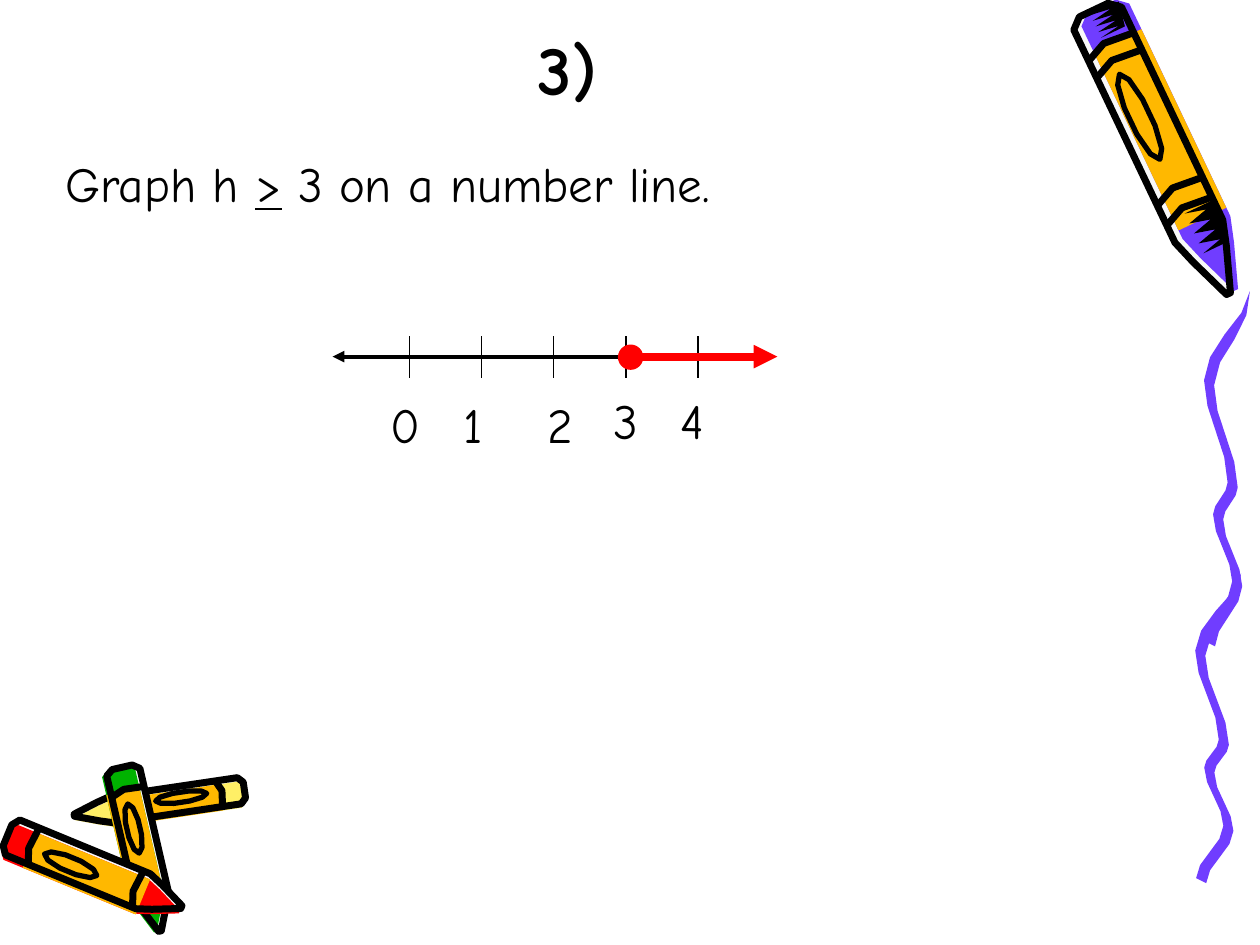
import dataclasses
import math

import lxml.etree
import pptx
import pptx.dml.color
import pptx.enum.shapes
import pptx.enum.text
import pptx.oxml.ns
import pptx.util

Inches = pptx.util.Inches
FONT = "Comic Neue"
BLACK, RED, ORANGE = "000000", "FF0000", "FFB800"
PURPLE, GREEN, YELLOW, PALE = "703DFF", "00B200", "FFEF66", "F8F8F8"

HALF_CRAYON = [(0, 0.3), (0.03, 0.5), (0.78, 0.5), (0.86, 0.35), (1, 0.04)]
CRAYON = HALF_CRAYON + [(along, -across) for along, across in reversed(HALF_CRAYON)]
SQUIGGLE_BENDS = [(0, 1), (0.26, 0.1), (0.55, 0.62), (0.64, 0.3), (0.83, 0.72), (1, 0.12)]


@dataclasses.dataclass
class Crayon:
    """A crayon from tail to tip; shift moves its colour off its ink."""

    tail: tuple
    tip: tuple
    width: float
    wax: str
    shift: float
    bands: tuple = (0.14, 0.74)
    shades: tuple = ()

    def place(self, points, shift=0):
        """Turn fractions of length and width into page inches."""
        run, rise = self.tip[0] - self.tail[0], self.tip[1] - self.tail[1]
        scale = self.width / math.hypot(run, rise)
        return [(self.tail[0] + along * run + (across + shift) * scale * rise,
                 self.tail[1] + along * rise - (across + shift) * scale * run)
                for along, across in points]


CRAYONS = [
    Crayon((8.68, 0.08), (9.75, 2.33), 0.42, PURPLE, 0.16, (0.12, 0.18, 0.63, 0.7),
           ((0.01, 0.09), (0.71, 0.85))),
    Crayon((1.94, 6.27), (0.59, 6.47), 0.21, YELLOW, 0.15),
    Crayon((0.97, 6.09), (1.27, 7.39), 0.27, GREEN, -0.14),
    Crayon((0.06, 6.63), (1.44, 7.2), 0.3, RED, -0.14),
]


def color(value):
    """Turn a hex string into a colour."""
    return pptx.dml.color.RGBColor.from_string(value)


def apply_format(target, values):
    """Set each named attribute on the target."""
    for name, value in values.items():
        setattr(target, name, value)


def paint(shape, fill=None, stroke=None, width=0):
    """Set the fill and line of a shape, each absent unless given."""
    shape.shadow.inherit = False
    for part, value in ((shape.fill, fill), (shape.line.fill, stroke)):
        if value is None:
            part.background()
        else:
            part.solid()
            part.fore_color.rgb = color(value)
    if stroke:
        shape.line.width = pptx.util.Pt(width)


def add_outline(page, points, fill=None, stroke=None, width=4, close=True):
    """Draw an outline through points in inches."""
    corners = [(Inches(across), Inches(down)) for across, down in points]
    builder = page.shapes.build_freeform(*corners[0])
    builder.add_line_segments(corners[1:], close=close)
    paint(builder.convert_to_shape(), fill, stroke, width)


def label_ring(center=0.37, steps=10):
    """Return the oval on a crayon's wrapper as fractions."""
    turns = [2 * math.pi * step / steps for step in range(steps)]
    return [(center + 0.15 * math.cos(turn), -0.08 + 0.2 * math.sin(turn)) for turn in turns]


def jagged_shade(start, end, teeth=4):
    """Return a zigzag shadow along one side of a crayon as fractions."""
    step = (end - start) / (2 * teeth)
    zigzag = [(start + index * step, 0.3 if index % 2 else -0.1) for index in range(2 * teeth + 1)]
    return [(start, 0.5)] + zigzag + [(end, 0.4)]


def add_crayon(page, crayon):
    """Draw paper, wax and wrapper, then the ink on top."""
    first, last = crayon.bands[0], crayon.bands[-1]
    wrapper = [(first, -0.5), (first, 0.5), (last + 0.05, 0.5), (last + 0.05, -0.5)]
    add_outline(page, crayon.place(CRAYON), PALE)
    add_outline(page, crayon.place(CRAYON, crayon.shift), crayon.wax)
    add_outline(page, crayon.place(wrapper, crayon.shift), ORANGE)
    add_outline(page, crayon.place(CRAYON), stroke=BLACK)
    add_outline(page, crayon.place(label_ring()), stroke=BLACK, width=3)
    for band in crayon.bands:
        curve = [(band + 0.02, -0.5), (band - 0.01, -0.1), (band, 0.5)]
        add_outline(page, crayon.place(curve), stroke=BLACK, close=False)
    for start, end in crayon.shades:
        add_outline(page, crayon.place(jagged_shade(start, end)), BLACK)


def add_squiggle(page, left, top, width, height, steps=4):
    """Draw a ribbon that eases from bend to bend and tapers at the top."""
    left_edge, right_edge = [], []
    for (begin, origin), (end, target) in zip(SQUIGGLE_BENDS, SQUIGGLE_BENDS[1:]):
        for step in range(steps + 1):
            part = step / steps
            down = begin + (end - begin) * part
            across = origin + (target - origin) * (1 - math.cos(math.pi * part)) / 2
            half = min(0.04, 0.3 * down)
            middle, level = left + width * across, top + height * down
            left_edge.append((middle - half, level - half / 2))
            right_edge.append((middle + half, level + half / 2))
    add_outline(page, left_edge + right_edge[::-1], PURPLE)


def add_line(page, start, end, stroke, width, arrows=()):
    """Draw a straight line with triangles at the named ends."""
    connector = page.shapes.add_connector(
        pptx.enum.shapes.MSO_CONNECTOR.STRAIGHT, *map(Inches, start + end))
    connector.line.color.rgb = color(stroke)
    connector.line.width = pptx.util.Pt(width)
    for name in arrows:
        arrow = lxml.etree.SubElement(connector.line._get_or_add_ln(), pptx.oxml.ns.qn("a:" + name))
        arrow.set("type", "triangle")
    lxml.etree.SubElement(connector._element.spPr, pptx.oxml.ns.qn("a:effectLst"))


def add_text(page, place, spans, size=28, frame_format=None, alignment=None):
    """Add a one-paragraph text box from pairs of text and font values."""
    box = page.shapes.add_textbox(*map(Inches, place))
    apply_format(box.text_frame, {"word_wrap": True, **(frame_format or {})})
    para = box.text_frame.paragraphs[0]
    para.alignment = alignment
    for text, font_format in spans:
        span = para.add_run()
        span.text = text
        apply_format(span.font, {"name": FONT, "size": pptx.util.Pt(size), **font_format})
        span.font.color.rgb = color(BLACK)


def add_number_line(page):
    """Draw the axis, its ticks and labels, and the solution ray."""
    axis, first_tick, last_tick = 2.83, 3.25, 5.54
    labels = [(3, 3.08), (3.58, 3.08), (4.25, 3.08), (4.77, 3.05), (5.3, 3.05)]
    gap = (last_tick - first_tick) / (len(labels) - 1)
    add_line(page, (2.64, axis), (6.14, axis), BLACK, 2.25, ("headEnd", "tailEnd"))
    for number, (left, top) in enumerate(labels):
        tick = first_tick + number * gap
        add_line(page, (tick, 2.67), (tick, 3), BLACK, 0.75)
        add_text(page, (left, top, 0.6, 0.57), [(str(number), {})])
    dot = page.shapes.add_shape(
        pptx.enum.shapes.MSO_SHAPE.OVAL, *map(Inches, (4.92, 2.75, 0.17, 0.17)))
    paint(dot, RED, RED, 2.25)
    add_line(page, (6.17, axis), (5.08, axis), RED, 4.5, ("headEnd",))


def main():
    """Build and save the slide."""
    deck = pptx.Presentation()
    apply_format(deck, {"slide_width": Inches(10), "slide_height": Inches(7.5)})
    page = deck.slides.add_slide(deck.slide_layouts[6])
    for crayon in CRAYONS:
        add_crayon(page, crayon)
    add_squiggle(page, 9.49, 4.55, 0.36, 2.44)
    add_squiggle(page, 9.56, 2.31, 0.36, 2.8)
    add_text(page, (0.75, 0.17, 7.51, 0.75), [("3)", {"bold": True})], 40,
             {"vertical_anchor": pptx.enum.text.MSO_ANCHOR.BOTTOM}, pptx.enum.text.PP_ALIGN.CENTER)
    add_text(page, (0.42, 1.17, 8.58, 0.57),
             [("Graph h ", {}), (">", {"underline": True}), (" 3 on a number line.", {})])
    add_number_line(page)
    deck.save("out.pptx")


if __name__ == "__main__":
    main()
